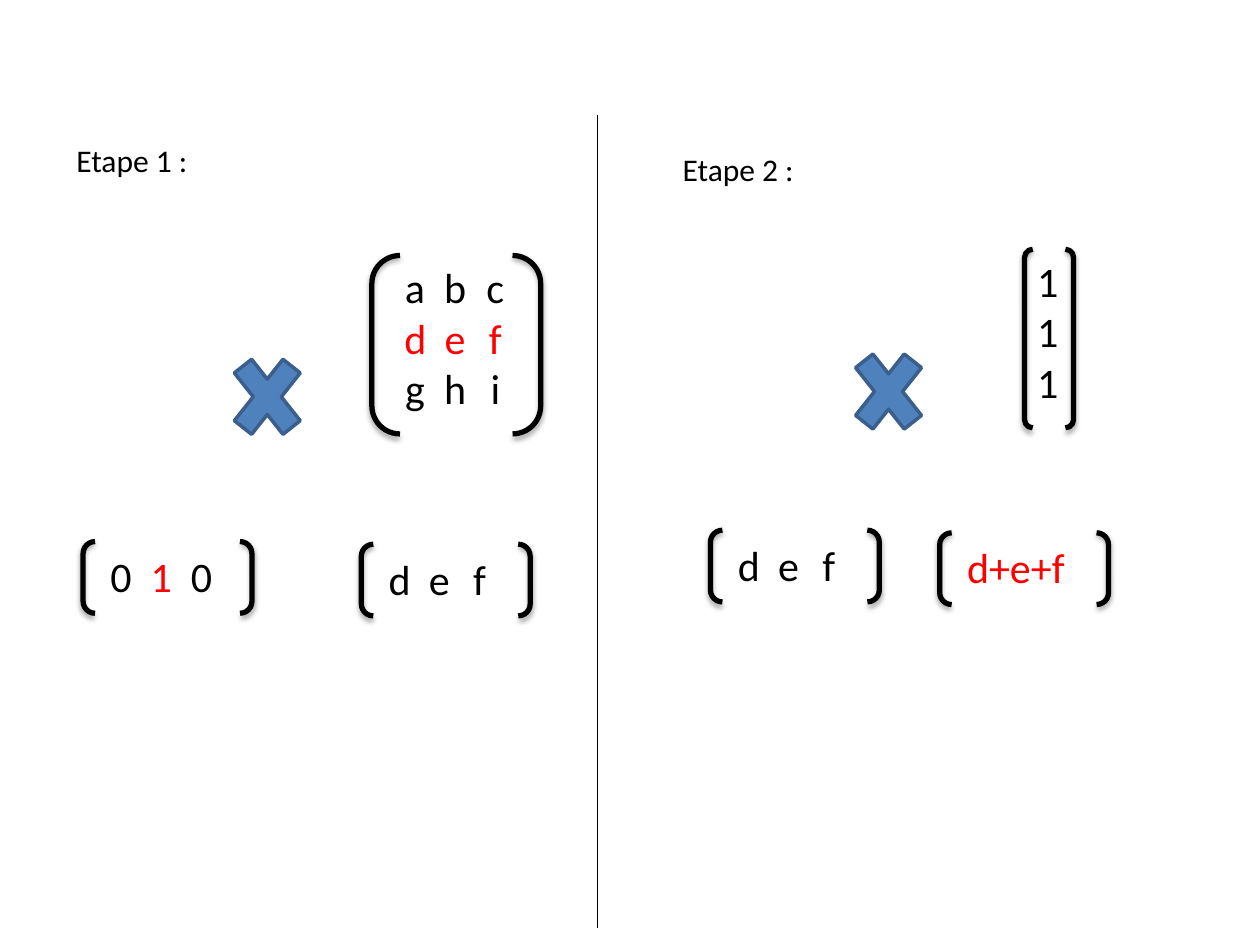
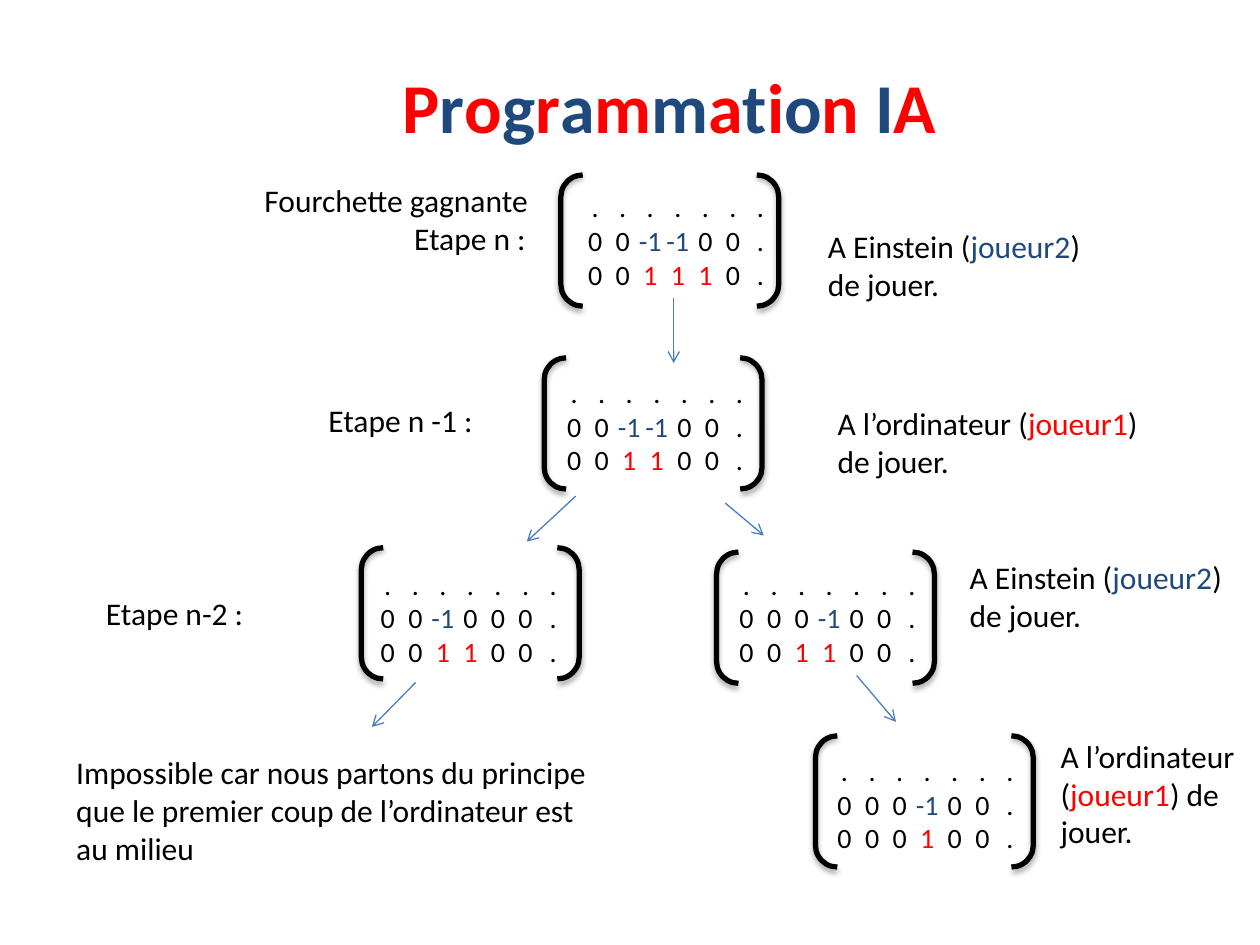
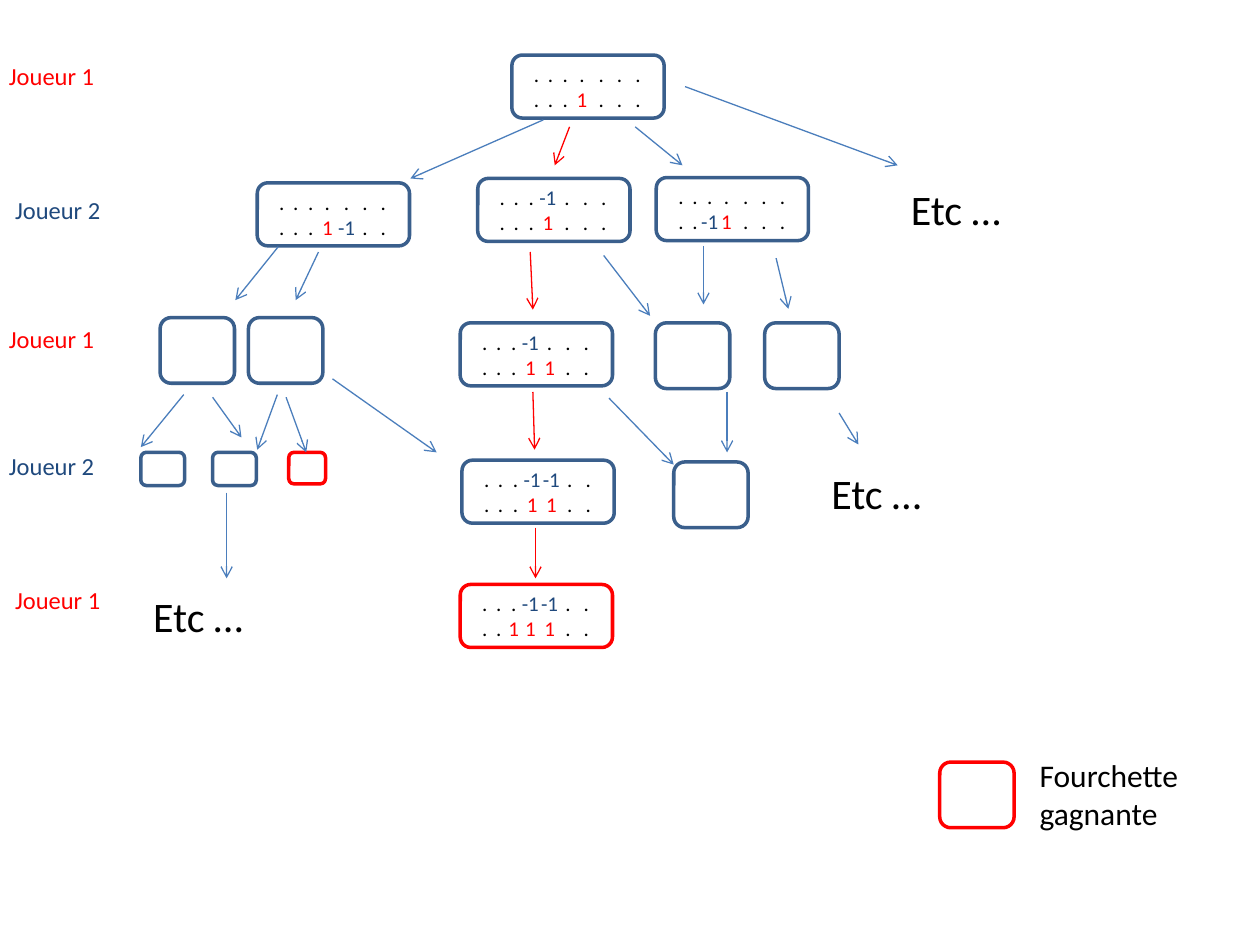
from itertools import cycle

from lxml import etree
from pptx import Presentation
from pptx.dml.color import RGBColor
from pptx.enum import shapes, text
from pptx.oxml import ns
from pptx.util import Pt

COLOURS = {"black": "000000", "white": "FFFFFF", "red": "FF0000", "navy": "1F497D",
           "blue": "4F81BD", "edge": "3A5F8C", "arrow": "4B7EBC"}
FONT = "Calibri"
PLAYER_COLOURS = {"1": "red", "-1": "navy"}

# Centres of the matrix columns, measured from the left of the text
PRODUCT_COLUMNS = [6 + 23 * i for i in range(3)]
BOARD_COLUMNS = [7 + 15.75 * i for i in range(7)]
NODE_COLUMNS = [2, 10, 18.5, 28, 39, 49.5, 60]

# Slide 1: the matrix product in two steps
STEPS = [("Etape 1 :", 36.5, 77), ("Etape 2 :", 383, 82)]
TIMES_SIGNS = [(126, 193), (481, 190)]
SELECTED = ("d e f", "red")
VECTORS = [((47.5, 309.5), "0 1 0", "black"), ((206.5, 311), "d e f", "black"),
           ((406, 303), "d e f", "black"), ((537, 304.5), "d+e+f", "red")]
DIVIDER = (341.5, 66, 341.5, 530.5)

# Slide 2: board states, as bracket position, text position, last two rows
TITLE_LETTERS = [*"Programmatio", "n ", "I", "A"]
BOARD_TOP = ". . . . . . ."
BOARDS = [
    ((320.5, 100), (326, 105), "0 0 -1 -1 0 0 .", "0 0 1 1 1 0 ."),
    ((311, 204.5), (314, 211), "0 0 -1 -1 0 0 .", "0 0 1 1 0 0 ."),
    ((206.5, 313), (207.5, 320.5), "0 0 -1 0 0 0 .", "0 0 1 1 0 0 ."),
    ((409.5, 315.5), (412.5, 320.5), "0 0 0 -1 0 0 .", "0 0 1 1 0 0 ."),
    ((466, 420.5), (468.5, 427), "0 0 0 -1 0 0 .", "0 0 0 1 0 0 ."),
]
BOARD_ARROWS = [(385, 170.5, 385, 207.5), (329, 283.5, 301, 309.5),
                (237.5, 390, 212.5, 415.5), (414.5, 287.5, 436.5, 306),
                (489.5, 386, 512, 412.5)]
EINSTEIN_TURN = ["A Einstein (", ("joueur2", "navy"), ") de jouer."]
COMPUTER = ["A l’ordinateur (", ("joueur1", "red")]
NOTES = [
    ((180.5, 225.5, 112, 29), [["Etape n -1 :"]]),
    ((53.5, 336, 127.5, 29), [["Etape n-2 :"]]),
    ((36.5, 427, 309.5, 94.5), [["Impossible car nous partons du principe que le premier "
                                 "coup de l’ordinateur est au milieu"]]),
    ((466, 126, 172, 51), [EINSTEIN_TURN]),
    ((471.5, 227.5, 211.5, 51), [COMPUTER + [")"], ["de jouer."]]),
    ((547, 315.5, 172, 51), [EINSTEIN_TURN]),
    ((599, 417.5, 120, 72.5), [COMPUTER + [") de jouer."]]),
]
FORK_NOTE = ((144, 100, 175.5, 51), [["Fourchette gagnante"], ["Etape n :"]])
FORK_STEP_INDENT = 85.5

# Slide 3: the game tree
NODES = [
    (292.5, 31.5, "edge", ". . . . . . .", ". . . 1 . . ."),
    (147, 104.5, "edge", ". . . . . . .", ". . . 1 -1 . ."),
    (273, 102, "edge", ". . . -1 . . .", ". . . 1 . . ."),
    (375, 101.5, "edge", ". . . . . . .", ". . -1 1 . . ."),
    (263, 184.5, "edge", ". . . -1 . . .", ". . . 1 1 . ."),
    (264, 263, "edge", ". . . -1 -1 . .", ". . . 1 1 . ."),
    (263, 334, "red", ". . . -1 -1 . .", ". . 1 1 1 . ."),
]
MEDIUM, SMALL = (42.5, 37.5), (25, 19)
EMPTY_NODES = [
    ((91.5, 181.5), MEDIUM, "edge"), ((142, 181.5), MEDIUM, "edge"),
    ((374.5, 184.5), MEDIUM, "edge"), ((437, 184.5), MEDIUM, "edge"),
    ((385, 264), MEDIUM, "edge"), ((537, 435.5), MEDIUM, "red"),
    ((80.5, 258.5), SMALL, "edge"), ((121.5, 258.5), SMALL, "edge"),
    ((165, 258.5), (21, 18), "red"),
]
TREE_ARROWS = {
    "arrow": [
        (310.5, 68.5, 234.5, 102), (363, 72.5, 390, 94.5), (391.5, 49.5, 513, 94.5),
        (159, 141, 134.5, 171.5), (182, 144, 169, 171.5), (345, 146, 371.5, 180.5),
        (402, 140.5, 402, 174), (443.5, 147.5, 450.5, 176.5), (190, 216.5, 249.5, 258.5),
        (348, 227.5, 385, 265.5), (415.5, 224, 415.5, 258.5), (479.5, 236, 490.5, 254),
        (105, 225.5, 80.5, 255.5), (121.5, 227, 138, 250), (158.5, 225.5, 147, 257),
        (163.5, 227, 175, 258.5), (129.5, 281.5, 129.5, 330.5),
    ],
    "red": [(325.5, 72.5, 317, 94.5), (303, 144, 304.5, 177),
            (304.5, 224, 305.5, 257), (306, 301.5, 306, 330.5)],
}
TURNS = [("Joueur 1", -2, 31.5, "red"), ("Joueur 2", 1.5, 108, "navy"),
         ("Joueur 1", -2, 181.5, "red"), ("Joueur 2", -2, 254, "navy"),
         ("Joueur 1", 1.5, 330.5, "red")]
CONTINUATIONS = [(80.5, 334), (513.5, 101.5), (468, 263.5)]
LEGEND = ((587, 428.5, 119, 51), [["Fourchette gagnante"]])


def rgb(name):
    return RGBColor.from_string(COLOURS[name])


def points(*lengths):
    return [Pt(length) for length in lengths]


def write(paragraph, runs, size, colour="black", bold=False):
    """Fill a paragraph with runs, each a string or a (string, colour) pair."""
    paragraph.font.name = FONT
    paragraph.font.size = Pt(size)
    paragraph.font.bold = bold
    paragraph.font.color.rgb = rgb(colour)
    for part in runs:
        words, run_colour = (part, colour) if isinstance(part, str) else part
        run = paragraph.add_run()
        run.text = words
        if run_colour != colour:
            run.font.color.rgb = rgb(run_colour)


def add_paragraphs(slide, box, count):
    frame = slide.shapes.add_textbox(*points(*box)).text_frame
    frame.word_wrap = True
    for _ in range(count - 1):
        frame.add_paragraph()
    return frame.paragraphs


def add_note(slide, box, lines, size=18, colour="black"):
    paragraphs = add_paragraphs(slide, box, len(lines))
    for paragraph, runs in zip(paragraphs, lines):
        write(paragraph, runs, size, colour)
    return paragraphs


def add_matrix(slide, box, rows, columns, size):
    """Centre the cells of each (row, colour) on tab stops; black rows show the players."""
    for paragraph, (row, colour) in zip(add_paragraphs(slide, box, len(rows)), rows):
        stops = etree.SubElement(paragraph._p.get_or_add_pPr(), ns.qn("a:tabLst"))
        for column in columns:
            etree.SubElement(stops, ns.qn("a:tab"), pos=str(Pt(column)), algn="ctr")
        runs = [("\t" + cell, PLAYER_COLOURS.get(cell, colour)) for cell in row.split()]
        write(paragraph, runs, size, colour)


def add_bracket(slide, box):
    bracket = slide.shapes.add_shape(shapes.MSO_SHAPE.DOUBLE_BRACKET, *points(*box))
    bracket.fill.background()
    bracket.line.color.rgb = rgb("black")
    bracket.line.width = Pt(3)


def add_flat(slide, kind, box, fill, line):
    flat = slide.shapes.add_shape(kind, *points(*box))
    flat.shadow.inherit = False
    flat.fill.solid()
    flat.fill.fore_color.rgb = rgb(fill)
    flat.line.color.rgb = rgb(line)
    flat.line.width = Pt(2)


def add_line(slide, ends, colour, arrow=True):
    line = slide.shapes.add_connector(shapes.MSO_CONNECTOR.STRAIGHT, *points(*ends))
    line.line.color.rgb = rgb(colour)
    line.line.width = Pt(0.75)
    properties = line.element.spPr
    if arrow:
        etree.SubElement(properties.find(ns.qn("a:ln")), ns.qn("a:tailEnd"), type="arrow")
    etree.SubElement(properties, ns.qn("a:effectLst"))


def build_product(slide):
    add_bracket(slide, (212.5, 146, 96.5, 102))
    add_matrix(slide, (224, 146, 79, 94),
               [("a b c", "black"), SELECTED, ("g h i", "black")], PRODUCT_COLUMNS, 24)
    add_bracket(slide, (585.5, 142.5, 28, 102))
    add_note(slide, (585.5, 142.5, 40, 94), [["1"]] * 3, 24)
    for position in TIMES_SIGNS:
        add_flat(slide, shapes.MSO_SHAPE.MATH_MULTIPLY, (*position, 53.5, 67.5), "blue", "edge")
    for (left, top), row, colour in VECTORS:
        add_bracket(slide, (left, top, 96.5, 41))
        box = (left + 8.5, top + 1.5, 79, 36)
        if " " in row:
            add_matrix(slide, box, [(row, colour)], PRODUCT_COLUMNS, 24)
        else:
            add_note(slide, box, [[row]], 24, colour)
    for step, left, top in STEPS:
        add_note(slide, (left, top, 142.5, 29), [[step]])
    add_line(slide, DIVIDER, "black", arrow=False)


def build_boards(slide):
    title = slide.shapes.title
    title.left, title.top, title.width, title.height = points(166.5, 32.5, 432, 55.5)
    heading = title.text_frame.paragraphs[0]
    heading.alignment = text.PP_ALIGN.CENTER
    write(heading, zip(TITLE_LETTERS, cycle(["red", "navy"])), 40, bold=True)
    for bracket_at, text_at, *rows in BOARDS:
        add_bracket(slide, (*bracket_at, 124.5, 75))
        add_matrix(slide, (*text_at, 119, 65.5),
                   [(row, "black") for row in (BOARD_TOP, *rows)], BOARD_COLUMNS, 16)
    for ends in BOARD_ARROWS:
        add_line(slide, ends, "arrow")
    for box, lines in NOTES:
        add_note(slide, box, lines)
    fork_step = add_note(slide, *FORK_NOTE)[1]
    fork_step._p.get_or_add_pPr().set("marL", str(Pt(FORK_STEP_INDENT)))


def build_tree(slide):
    rounded = shapes.MSO_SHAPE.ROUNDED_RECTANGLE
    for position, size, line in EMPTY_NODES:
        add_flat(slide, rounded, (*position, *size), "white", line)
    for left, top, line, *rows in NODES:
        add_flat(slide, rounded, (left, top, 87, 36), "white", line)
        add_matrix(slide, (left + 5, top, 85.5, 36),
                   [(row, "black") for row in rows], NODE_COLUMNS, 12)
    for colour, arrows in TREE_ARROWS.items():
        for ends in arrows:
            add_line(slide, ends, colour)
    for player, left, top, colour in TURNS:
        add_note(slide, (left, top, 85, 24.5), [[player]], 14, colour)
    for position in CONTINUATIONS:
        add_note(slide, (*position, 83, 36), [["Etc …"]], 24)
    add_note(slide, *LEGEND)


def main():
    deck = Presentation()
    deck.slide_width, deck.slide_height = points(720, 540)
    title_only, blank = deck.slide_layouts[5], deck.slide_layouts[6]
    for layout, build in [(blank, build_product), (title_only, build_boards),
                          (blank, build_tree)]:
        build(deck.slides.add_slide(layout))
    deck.save("out.pptx")


if __name__ == "__main__":
    main()
